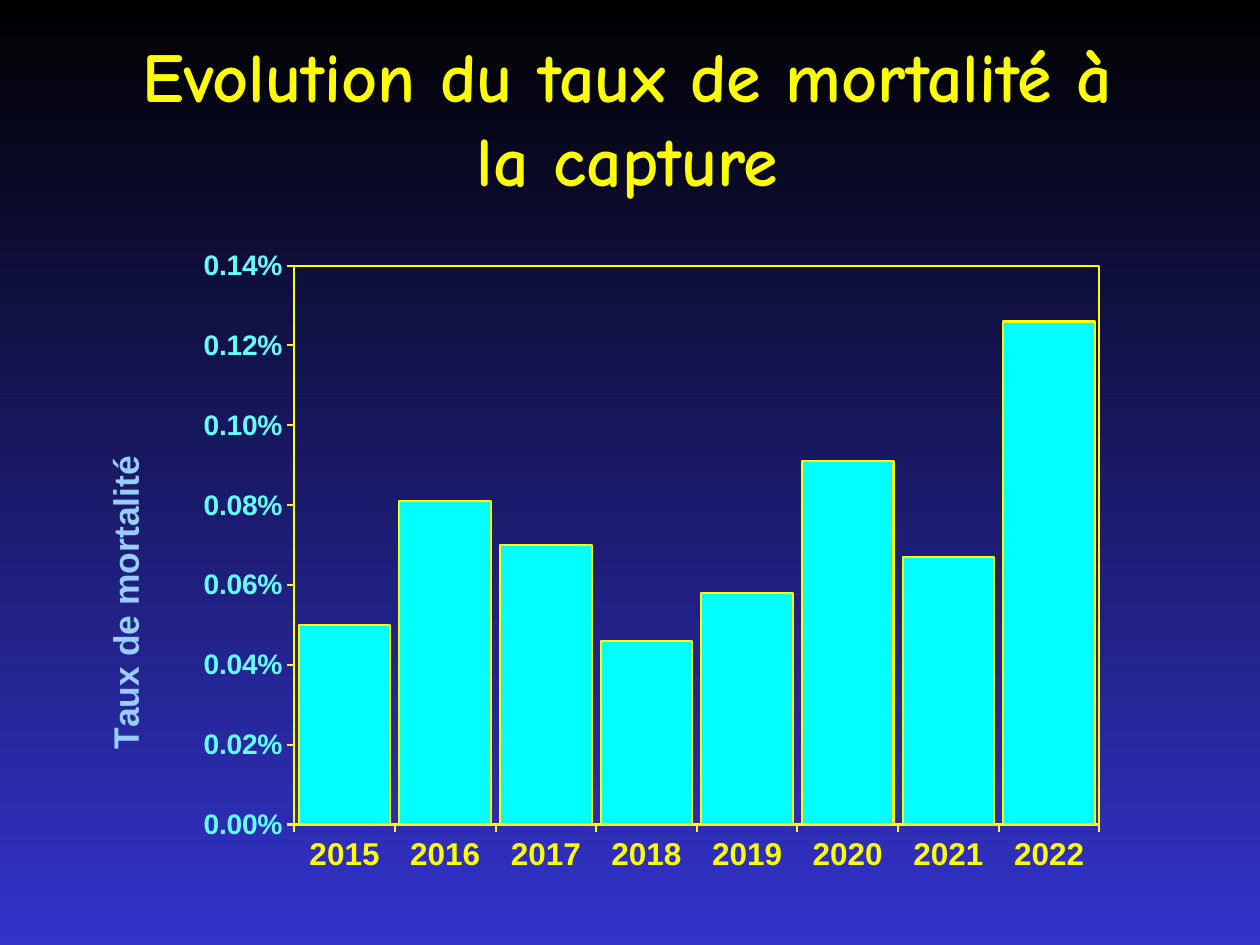
from lxml import etree
from pptx import Presentation
from pptx.chart.data import CategoryChartData
from pptx.dml.color import RGBColor
from pptx.enum.chart import XL_CHART_TYPE, XL_TICK_MARK
from pptx.enum.text import MSO_ANCHOR, MSO_AUTO_SIZE, PP_ALIGN
from pptx.oxml import parse_xml
from pptx.oxml.ns import qn
from pptx.util import Inches, Pt

BLACK = RGBColor(0x00, 0x00, 0x00)
BLUE = RGBColor(0x33, 0x33, 0xCC)
YELLOW = RGBColor(0xFF, 0xFF, 0x00)
CYAN = RGBColor(0x00, 0xFF, 0xFF)
AQUA = RGBColor(0x66, 0xFF, 0xFF)
SKY = RGBColor(0x99, 0xCC, 0xFF)
C_NS = "http://schemas.openxmlformats.org/drawingml/2006/chart"
A_NS = "http://schemas.openxmlformats.org/drawingml/2006/main"


def style(font, name, size, color, bold=True):
    font.name, font.size, font.bold = name, Pt(size), bold
    font.color.rgb = color


def layout(**parts):
    """Manual chart layout from fractions of the chart's size."""
    root = etree.Element(qn("c:layout"))
    manual = etree.SubElement(root, qn("c:manualLayout"))
    for tag, val in parts.items():
        etree.SubElement(manual, qn("c:" + tag)).set("val", str(val))
    return root


prs = Presentation()
prs.slide_width, prs.slide_height = Inches(10), Inches(7.5)
slide = prs.slides.add_slide(prs.slide_layouts[5])

# Background gradient, top to bottom
fill = slide.background.fill
fill.gradient()
fill.gradient_angle = 270
for stop, color in zip(fill.gradient_stops, (BLACK, BLUE)):
    stop.color.rgb = color
fill.gradient_stops[0].position = 0
fill.gradient_stops[1].position = 1

# Title with a text shadow
title = slide.shapes.title
title.left, title.top = Inches(0.73), Inches(0.21)
title.width, title.height = Inches(8.5), Inches(1.25)
frame = title.text_frame
frame.text = "Evolution du taux de mortalité à la capture"
frame.word_wrap = True
frame.auto_size = MSO_AUTO_SIZE.NONE
frame.vertical_anchor = MSO_ANCHOR.TOP
para = frame.paragraphs[0]
para.alignment = PP_ALIGN.CENTER
style(para.font, "Comic Neue", 40, YELLOW)
shadow = parse_xml(
    f'<a:effectLst xmlns:a="{A_NS}"><a:outerShdw dist="35921" dir="2700000">'
    '<a:srgbClr val="000000"/></a:outerShdw></a:effectLst>')
props = para.runs[0]._r.get_or_add_rPr()
props.append(shadow)

# Column chart
data = CategoryChartData(number_format="0.00%")
data.categories = [str(year) for year in range(2015, 2023)]
data.add_series("Series 1", (0.0005, 0.00081, 0.0007, 0.00046,
                             0.00058, 0.00091, 0.00067, 0.00126))
chart = slide.shapes.add_chart(
    XL_CHART_TYPE.COLUMN_CLUSTERED, Inches(0.59), Inches(1.94),
    Inches(8.95), Inches(5.43), data).chart
chart.has_legend = chart.has_title = False
style(chart.font, "Arial", 11.5, BLACK, False)

# Columns
plot = chart.plots[0]
plot.gap_width = 10
plot.vary_by_categories = False
bars = plot.series[0].format
bars.fill.solid()
bars.fill.fore_color.rgb = CYAN
bars.line.color.rgb = YELLOW
bars.line.width = Pt(1.15)

# Axes
cat, val = chart.category_axis, chart.value_axis
for axis, size, color in ((cat, 18, YELLOW), (val, 16.1, AQUA)):
    axis.has_major_gridlines = False
    axis.major_tick_mark = XL_TICK_MARK.OUTSIDE
    axis.minor_tick_mark = XL_TICK_MARK.NONE
    axis.format.line.color.rgb = YELLOW
    axis.format.line.width = Pt(1.15)
    style(axis.tick_labels.font, "Arial", size, color)
val.minimum_scale, val.maximum_scale, val.major_unit = 0, 0.0014, 0.0002
val.tick_labels.number_format = "0.00%"
val.tick_labels.number_format_is_linked = False

# Value axis title, turned upwards
label = val.axis_title.text_frame
label.text = "Taux de mortalité"
style(label.paragraphs[0].font, "Arial", 20.2, SKY)
body = label._txBody.find(qn("a:bodyPr"))
body.set("rot", "-5400000")
body.set("vert", "horz")
head = val.axis_title._element
for old in head.findall(qn("c:layout")):
    head.remove(old)
head.find(qn("c:tx")).addnext(
    layout(xMode="edge", yMode="edge", x=0.02, y=0.3))

# Plot area place and frame
area = chart._chartSpace.chart.plotArea
for old in area.findall(qn("c:layout")):
    area.remove(old)
area.insert(0, layout(layoutTarget="inner", xMode="edge", yMode="edge",
                      x=0.195, y=0.031, w=0.714, h=0.817))
area.append(parse_xml(
    f'<c:spPr xmlns:c="{C_NS}" xmlns:a="{A_NS}"><a:noFill/>'
    f'<a:ln w="{Pt(1.15)}"><a:solidFill><a:srgbClr val="{YELLOW}"/>'
    '</a:solidFill></a:ln></c:spPr>'))

prs.save("out.pptx")
